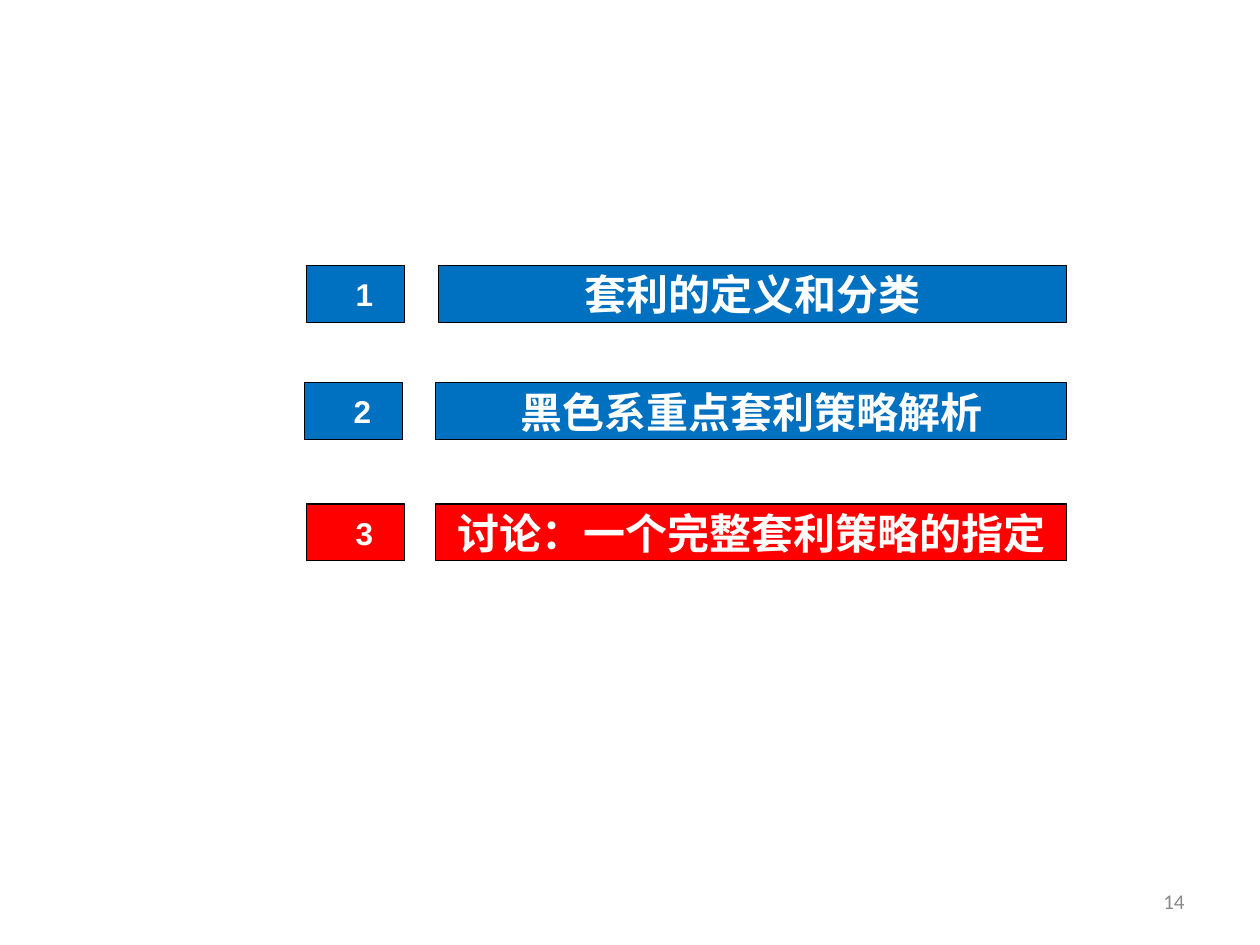
from pptx import Presentation
from pptx import util as u
from pptx.dml.color import RGBColor
from pptx.enum import shapes, text

Pt = u.Pt


def tint(code):
    return RGBColor.from_string(code)


def write(shape, words, size, font, color, align, bold=False):
    frame = shape.text_frame
    frame.word_wrap = True
    frame.vertical_anchor = text.MSO_ANCHOR.MIDDLE
    para = frame.paragraphs[0]
    para.alignment = align
    run = para.add_run()
    run.text = words
    run.font.size = Pt(size)
    run.font.name = font
    run.font.bold = bold
    run.font.color.rgb = tint(color)


deck = Presentation()
deck.slide_width, deck.slide_height = Pt(720), Pt(540)
slide = deck.slides.add_slide(deck.slide_layouts[6])

page = slide.shapes.add_textbox(Pt(516), Pt(500.5), Pt(168), Pt(28.75))
write(page, "14", 12, "Calibri", "898989", text.PP_ALIGN.RIGHT)

high, wide, end = 32.5, 56.25, 609.5
agenda = [
    ("套利的定义和分类", "0070C0", 151.75, 175, 250.75),
    ("黑色系重点套利策略解析", "0070C0", 218.75, 174, 249),
    ("讨论：一个完整套利策略的指定", "FF0000", 288, 175, 249),
]
for num, (topic, fill, top, left, start) in enumerate(agenda, 1):
    row = slide.shapes.add_group_shape()
    cells = [(str(num), 18, left, wide), (topic, 24, start, end - start)]
    for words, size, x, width in cells:
        box = row.shapes.add_shape(shapes.MSO_SHAPE.RECTANGLE,
                                   Pt(x), Pt(top), Pt(width), Pt(high))
        box.shadow.inherit = False
        box.fill.solid()
        box.fill.fore_color.rgb = tint(fill)
        box.line.color.rgb = tint("000000")
        box.line.width = Pt(0.75)
        write(box, words, size, "Arial", "FFFFFF", text.PP_ALIGN.CENTER, True)
    row.shapes[0].text_frame.margin_left = Pt(17.2)

deck.save("out.pptx")
